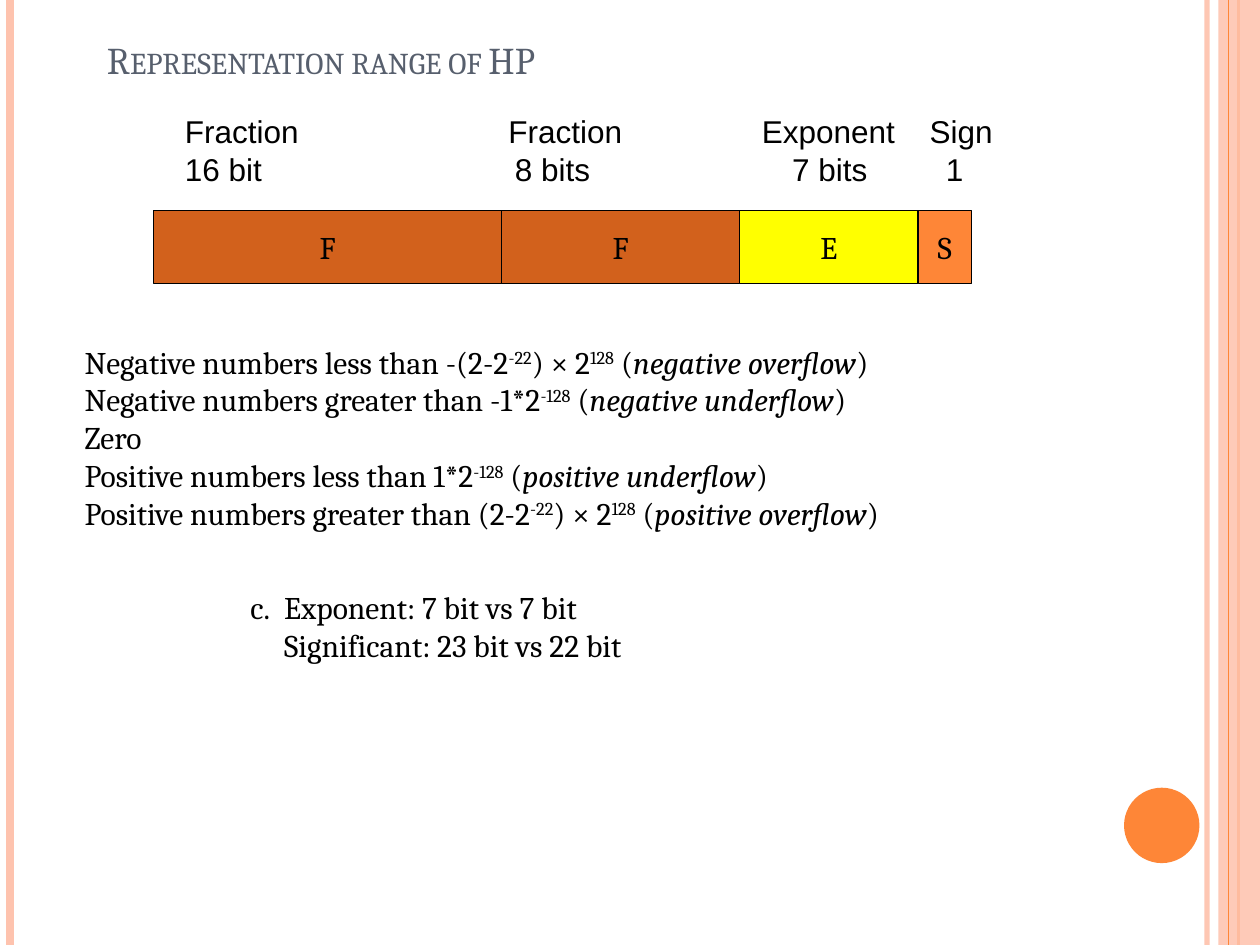
"""Build the slide on the representation range of the HP floating-point format."""
from dataclasses import dataclass

from lxml import etree
from pptx import Presentation
from pptx.dml.color import RGBColor
from pptx.enum.shapes import MSO_CONNECTOR, MSO_SHAPE
from pptx.enum.text import MSO_ANCHOR, MSO_AUTO_SIZE, PP_ALIGN
from pptx.oxml.ns import qn
from pptx.util import Cm, Pt

STRAIGHT = MSO_CONNECTOR.STRAIGHT
RECTANGLE = MSO_SHAPE.RECTANGLE
OVAL = MSO_SHAPE.OVAL
LEFT, CENTER = PP_ALIGN.LEFT, PP_ALIGN.CENTER
TOP, MIDDLE, BOTTOM = MSO_ANCHOR.TOP, MSO_ANCHOR.MIDDLE, MSO_ANCHOR.BOTTOM
NO_AUTOFIT = MSO_AUTO_SIZE.NONE

SLIDE_WIDTH, SLIDE_HEIGHT = 25.4, 19.05
SERIF, SANS = "Cambria", "Arial"
BLACK, SLATE, ORANGE, PEACH = "000000", "575F6D", "FE8637", "FEC3AE"
RUST, YELLOW = "D2611C", "FFFF00"


@dataclass
class Stripe:
    x: float
    color: str
    width: float
    opacity: int = 100


@dataclass
class Field:
    letter: str
    width: float
    color: str


@dataclass
class RangeLine:
    pieces: tuple[str, ...]
    condition: str = ""


@dataclass
class IndentedLine:
    text: str
    margin: float = 0
    indent: float = 0


@dataclass
class FieldLabel:
    left: float
    name: str
    size: str
    size_margin: float = 0


STRIPES = [
    Stripe(24.33, PEACH, 3, 93),
    Stripe(0.2, PEACH, 4.5),
    Stripe(24.97, ORANGE, 1.5),
]
EDGE_STRIPE = Stripe(24.77, ORANGE, 0.75)
FIELDS = [
    Field("F", 7.01, RUST),
    Field("F", 4.8, RUST),
    Field("E", 3.6, YELLOW),
    Field("S", 1.07, ORANGE),
]
RANGES = [
    RangeLine(("Negative numbers less than -(2-2", "-22", ") × 2", "128"), "negative overflow"),
    RangeLine(("Negative numbers greater than -1*2", "-128"), "negative underflow"),
    RangeLine(("Zero",)),
    RangeLine(("Positive numbers less than 1*2", "-128"), "positive underflow"),
    RangeLine(("Positive numbers greater than (2-2", "-22", ") × 2", "128"), "positive overflow"),
]
FIELD_LABELS = [
    FieldLabel(3.48, "Fraction", "16 bit"),
    FieldLabel(10, "Fraction", "8 bits", 0.13),
    FieldLabel(15.11, "Exponent", "7 bits", 0.61),
    FieldLabel(18.49, "Sign", "1", 0.33),
]
COMPARISON = [
    IndentedLine("c.\tExponent: 7 bit vs 7 bit", 0.68, -0.68),
    IndentedLine("Significant: 23 bit vs 22 bit", 0.68),
]


def rgb(color: str) -> RGBColor:
    return RGBColor.from_string(color)


def set_opacity(fill, opacity: int) -> None:
    color_element = fill._xPr.find(qn("a:solidFill"))[0]
    etree.SubElement(color_element, qn("a:alpha")).set("val", str(opacity * 1000))


def format_paragraph(paragraph, font_name: str = SERIF, size: float = 18,
                     color: str = BLACK, alignment=LEFT) -> None:
    paragraph.alignment = alignment
    paragraph.space_before = Pt(0)
    paragraph.font.name = font_name
    paragraph.font.size = Pt(size)
    paragraph.font.color.rgb = rgb(color)


def set_indent(paragraph, margin: float, indent: float) -> None:
    properties = paragraph._p.get_or_add_pPr()
    properties.set("marL", str(Cm(margin)))
    properties.set("indent", str(Cm(indent)))


def remove_bullet(paragraph) -> None:
    font_element = paragraph._p.pPr.find(qn("a:defRPr"))
    font_element.addprevious(etree.Element(qn("a:buNone")))


def place(shape, left: float, top: float, width: float, height: float, anchor) -> None:
    shape.left, shape.top, shape.width, shape.height = map(Cm, (left, top, width, height))
    shape.text_frame.auto_size = NO_AUTOFIT
    shape.text_frame.word_wrap = True
    shape.text_frame.vertical_anchor = anchor


def add_stripe(slide, stripe: Stripe) -> None:
    connector = slide.shapes.add_connector(
        STRAIGHT, Cm(stripe.x), 0, Cm(stripe.x), Cm(SLIDE_HEIGHT))
    connector.line.color.rgb = rgb(stripe.color)
    connector.line.width = Pt(stripe.width)
    if stripe.opacity < 100:
        set_opacity(connector.line.fill, stripe.opacity)
    etree.SubElement(connector._element.spPr, qn("a:effectLst"))


def add_plain_shape(slide, kind, left: float, top: float, width: float,
                    height: float, color: str):
    shape = slide.shapes.add_shape(kind, Cm(left), Cm(top), Cm(width), Cm(height))
    shape.shadow.inherit = False
    shape.fill.solid()
    shape.fill.fore_color.rgb = rgb(color)
    shape.line.fill.background()
    return shape


def add_decoration(slide) -> None:
    for stripe in STRIPES:
        add_stripe(slide, stripe)
    band_left = 24.56
    band = add_plain_shape(
        slide, RECTANGLE, band_left, 0, SLIDE_WIDTH - band_left, SLIDE_HEIGHT, PEACH)
    set_opacity(band.fill, 87)
    add_stripe(slide, EDGE_STRIPE)
    add_plain_shape(slide, OVAL, 22.66, 15.88, 1.52, 1.52, ORANGE)


def fill_title(title) -> None:
    place(title, 1.9, 0.74, 21.8, 1.04, BOTTOM)
    title.text_frame.text = "Representation range of HP"
    paragraph = title.text_frame.paragraphs[0]
    format_paragraph(paragraph, size=21.6, color=SLATE)
    paragraph.runs[0].font._element.set("cap", "small")


def fill_ranges(body, ranges: list[RangeLine]) -> None:
    place(body, 1.45, 6.78, 21.16, 4.11, TOP)
    frame = body.text_frame
    for index, line in enumerate(ranges):
        paragraph = frame.add_paragraph() if index else frame.paragraphs[0]
        format_paragraph(paragraph)
        set_indent(paragraph, 0, 0)
        remove_bullet(paragraph)
        for position, piece in enumerate(line.pieces):
            run = paragraph.add_run()
            run.text = piece
            if position % 2:
                run.font._element.set("baseline", "30000")
        if line.condition:
            for text, italic in ((" (", False), (line.condition, True), (")", False)):
                run = paragraph.add_run()
                run.text = text
                run.font.italic = italic


def add_fields(slide, fields: list[Field]) -> None:
    left = 3.1
    for field in fields:
        shape = add_plain_shape(slide, RECTANGLE, left, 4.24, field.width, 1.47, field.color)
        shape.line.color.rgb = rgb(BLACK)
        shape.line.width = Pt(0.75)
        shape.text_frame.text = field.letter
        shape.text_frame.word_wrap = False
        shape.text_frame.vertical_anchor = MIDDLE
        format_paragraph(shape.text_frame.paragraphs[0], alignment=CENTER)
        left += field.width


def add_text(slide, lines: list[IndentedLine], left: float, top: float,
             width: float, font_name: str) -> None:
    box = slide.shapes.add_textbox(0, 0, 0, 0)
    place(box, left, top, width, 1.8, TOP)
    frame = box.text_frame
    for index, line in enumerate(lines):
        paragraph = frame.add_paragraph() if index else frame.paragraphs[0]
        paragraph.add_run().text = line.text
        format_paragraph(paragraph, font_name)
        set_indent(paragraph, line.margin, line.indent)


def main() -> None:
    presentation = Presentation()
    presentation.slide_width, presentation.slide_height = Cm(SLIDE_WIDTH), Cm(SLIDE_HEIGHT)
    slide = presentation.slides.add_slide(presentation.slide_layouts[1])
    add_decoration(slide)
    fill_title(slide.shapes.title)
    fill_ranges(slide.placeholders[1], RANGES)
    add_fields(slide, FIELDS)
    for label in FIELD_LABELS:
        lines = [IndentedLine(label.name), IndentedLine(label.size, label.size_margin)]
        add_text(slide, lines, label.left, 2.13, 3.3, SANS)
    add_text(slide, COMPARISON, 4.8, 11.73, 12.7, SERIF)
    presentation.save("out.pptx")


if __name__ == "__main__":
    main()
